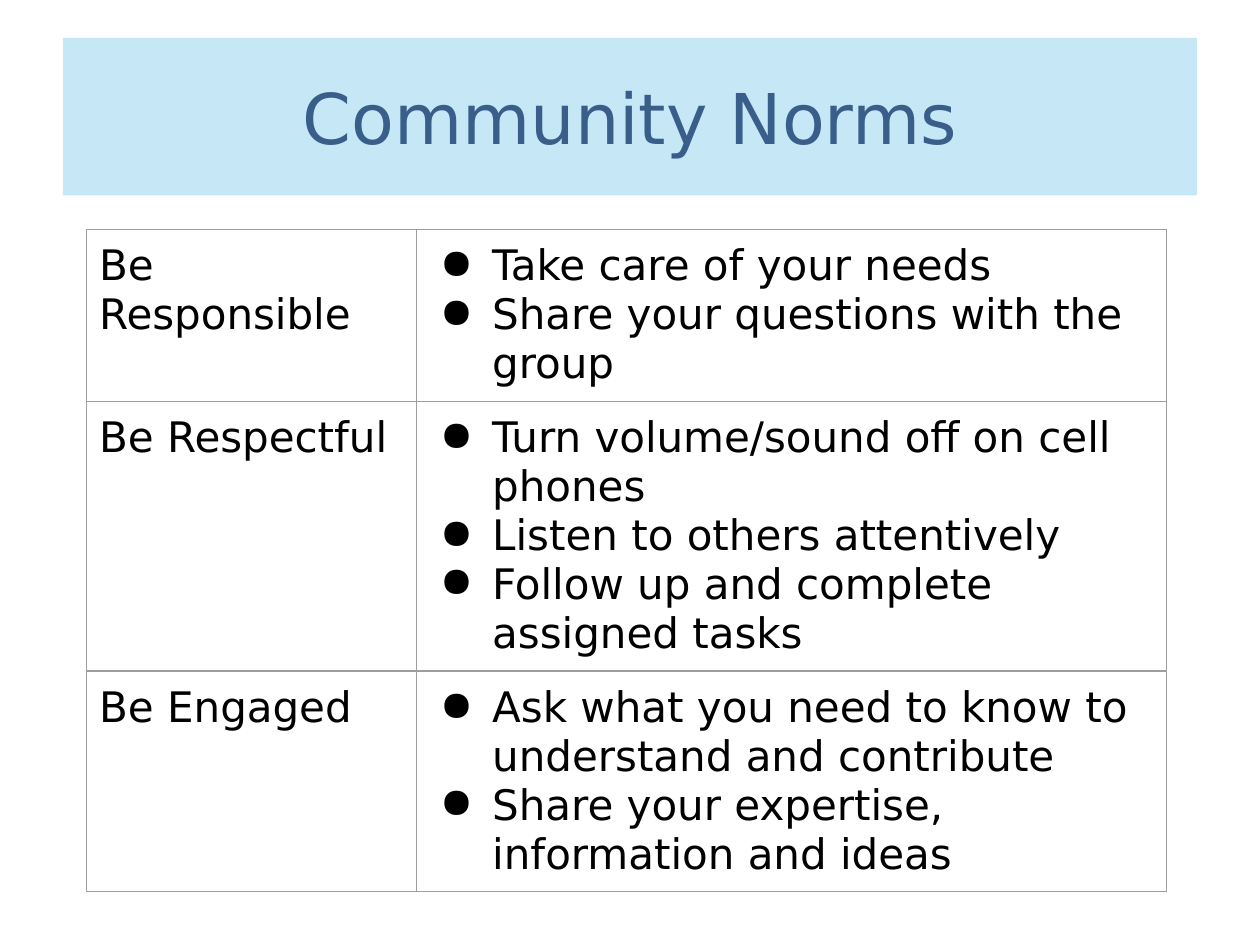
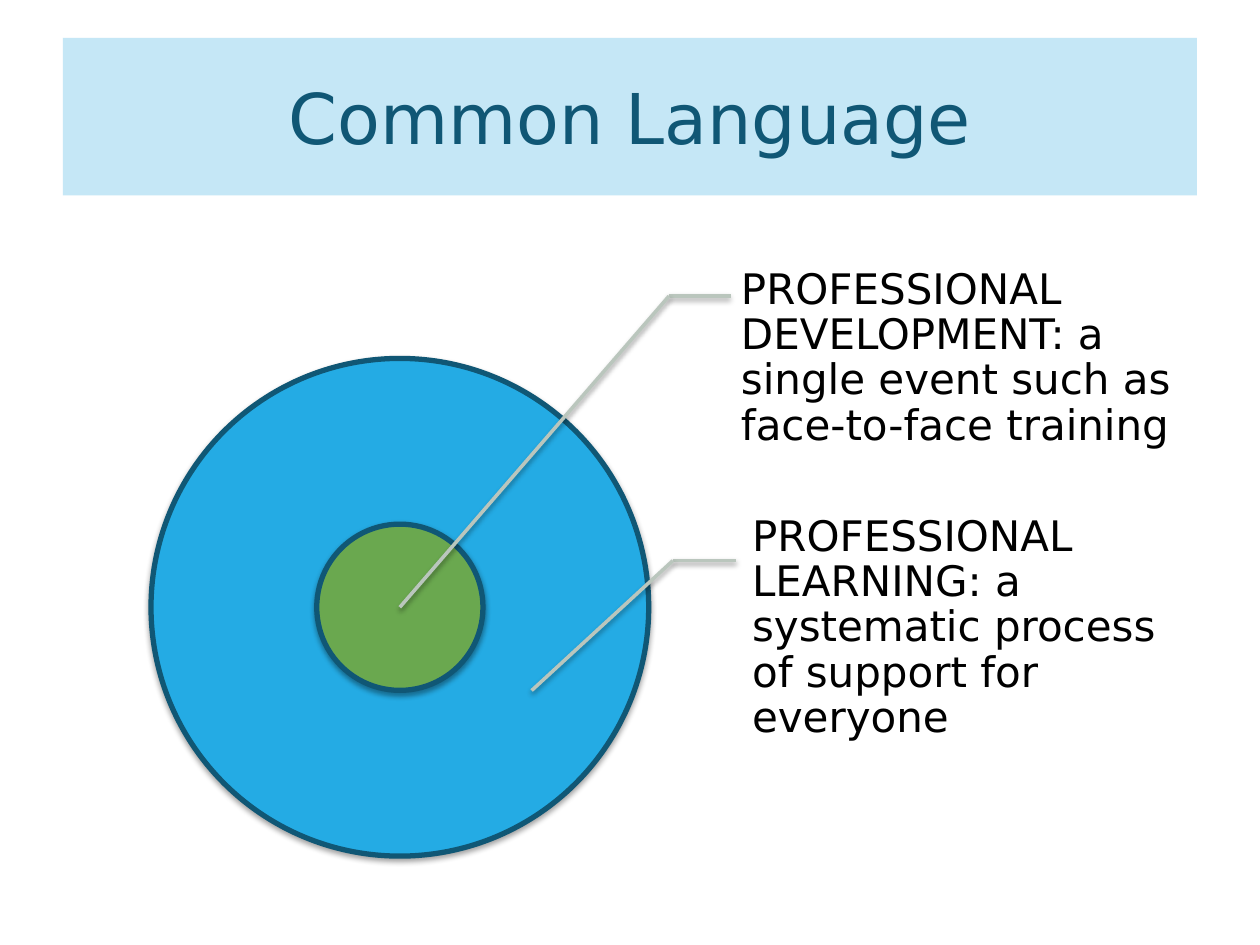
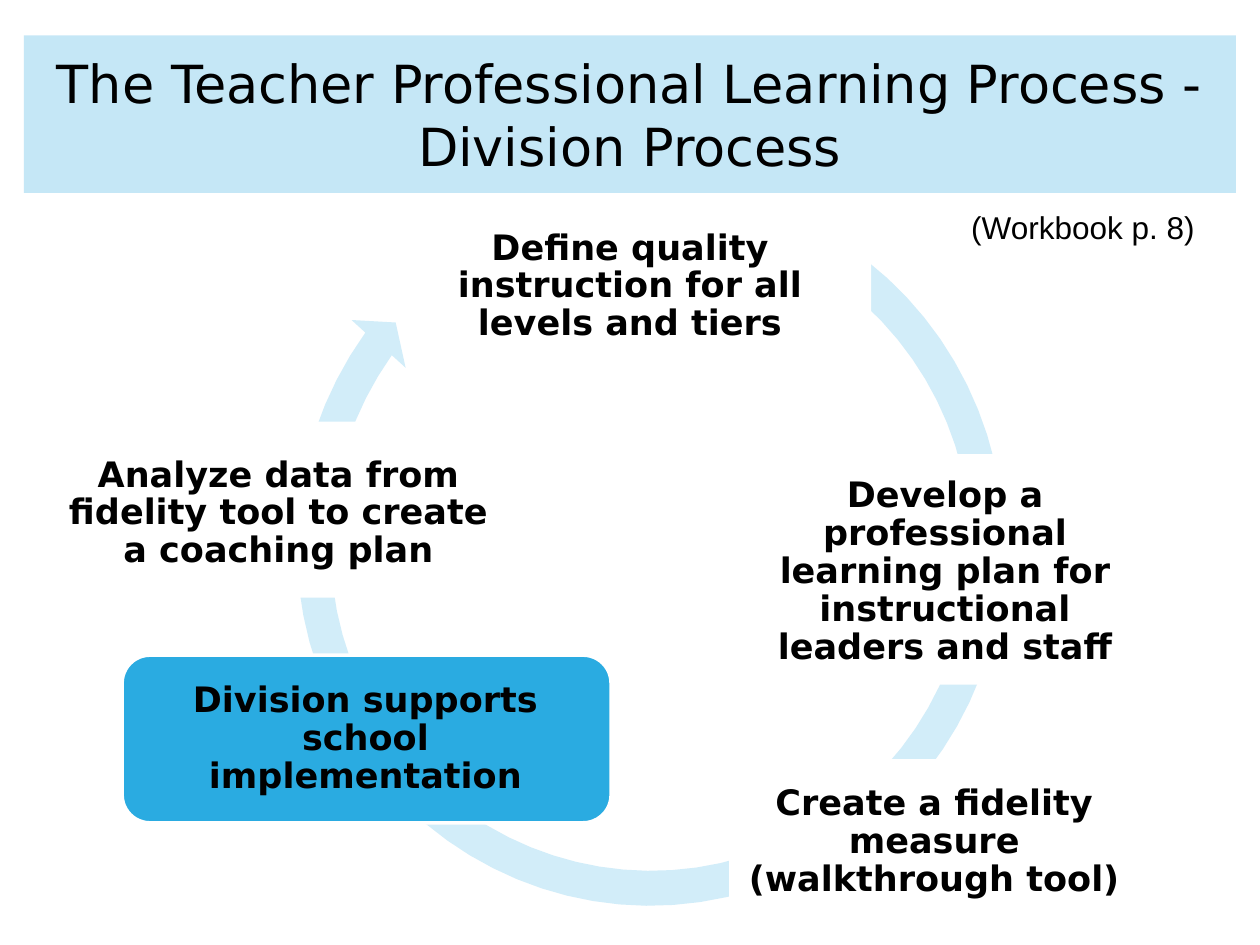
"""Build three slides on community norms, shared vocabulary and a learning cycle."""
from dataclasses import dataclass
from lxml.etree import SubElement
from pptx import Presentation
from pptx.dml.color import RGBColor
from pptx.enum.shapes import MSO_CONNECTOR, MSO_SHAPE
from pptx.enum.text import MSO_ANCHOR, PP_ALIGN
from pptx.oxml import parse_xml
from pptx.oxml.ns import nsdecls, qn
from pptx.util import Pt


@dataclass(frozen=True)
class Theme:
    font: str = "DejaVu Sans"
    note_font: str = "Arial"
    band: str = "A9DCF2"
    band_alpha: int = 67000
    norms: str = "395E89"
    navy: str = "105775"
    text: str = "000000"
    white: str = "FFFFFF"
    grid: str = "9E9E9E"
    outer: str = "24ABE4"
    inner: str = "6AA84F"
    leader: str = "BAC6BD"
    cycle: str = "D2EDF9"
    current: str = "2AABE1"
    title: int = 40
    long_title: int = 30
    body: int = 24
    step: int = 20
    note: int = 18


T = Theme()


def write(tf, texts, size, color=T.text, name=T.font, bold=False, frame={}, para={}):
    for key, value in {"word_wrap": True, **frame}.items():
        setattr(tf, key, value)
    for i, text in enumerate(texts):
        p = tf.paragraphs[0] if i == 0 else tf.add_paragraph()
        for key, value in para.items():
            setattr(p, key, value)
        r = p.add_run()
        r.text = text
        for key, value in {"size": Pt(size), "name": name, "bold": bold}.items():
            setattr(r.font, key, value)
        r.font.color.rgb = RGBColor.from_string(color)


def paint(sp, fill, line=None, width=0):
    sp.shadow.inherit = False
    sp.fill.solid()
    sp.fill.fore_color.rgb = RGBColor.from_string(fill)
    if line:
        sp.line.color.rgb = RGBColor.from_string(line)
        sp.line.width = Pt(width)
    else:
        sp.line.fill.background()


prs = Presentation()
prs.slide_width, prs.slide_height = Pt(720), Pt(540)

titles = [
    ("Community Norms", (36, 21.6, 648, 90), T.title, T.norms),
    ("Common Language", (36, 21.6, 648, 90), T.title, T.navy),
    ("The Teacher Professional Learning Process - Division Process",
     (13.7, 20.2, 692.6, 90), T.long_title, T.text),
]
slides = []
for text, box, size, color in titles:
    s = prs.slides.add_slide(prs.slide_layouts[6])
    sp = s.shapes.add_shape(MSO_SHAPE.RECTANGLE, *map(Pt, box))
    paint(sp, T.band)
    rgb = sp._element.spPr.find(qn("a:solidFill")).find(qn("a:srgbClr"))
    SubElement(rgb, qn("a:alpha"), val=str(T.band_alpha))
    write(sp.text_frame, [text], size, color,
          frame={"vertical_anchor": MSO_ANCHOR.MIDDLE}, para={"alignment": PP_ALIGN.CENTER})
    slides.append(s)
norms_slide, language_slide, process_slide = slides

norms = [
    ("Be Responsible", 98, ["Take care of your needs", "Share your questions with the group"]),
    ("Be Respectful", 154, ["Turn volume/sound off on cell phones", "Listen to others attentively",
                            "Follow up and complete assigned tasks"]),
    ("Be Engaged", 126, ["Ask what you need to know to understand and contribute",
                         "Share your expertise, information and ideas"]),
]
tbl = norms_slide.shapes.add_table(len(norms), 2, Pt(49.5), Pt(131), Pt(617), Pt(378)).table
tbl.first_row = tbl.horz_banding = False
for col, width in zip(tbl.columns, (188.6, 428.4)):
    col.width = Pt(width)
for row, (norm, height, actions) in zip(tbl.rows, norms):
    row.height = Pt(height)
    for cell, texts in zip(row.cells, ([norm], actions)):
        for side in ("left", "right", "top", "bottom"):
            setattr(cell, f"margin_{side}", Pt(7.2))
        cell.fill.background()
        tcPr = cell._tc.get_or_add_tcPr()
        for i, edge in enumerate("LRTB"):
            tcPr.insert(i, parse_xml(
                f'<a:ln{edge} {nsdecls("a")} w="{Pt(0.75)}"><a:solidFill>'
                f'<a:srgbClr val="{T.grid}"/></a:solidFill></a:ln{edge}>'))
        write(cell.text_frame, texts, T.body)
    for p in row.cells[1].text_frame.paragraphs:
        pPr = p._p.get_or_add_pPr()
        pPr.set("marL", str(Pt(36)))
        pPr.set("indent", str(-Pt(30)))
        SubElement(SubElement(pPr, qn("a:buClr")), qn("a:srgbClr"), val=T.text)
        SubElement(pPr, qn("a:buChar"), char="●")

shaded = []
cx, cy = 228.5, 347
for diameter, fill in ((284.4, T.outer), (95, T.inner)):
    sp = language_slide.shapes.add_shape(
        MSO_SHAPE.OVAL, Pt(cx - diameter / 2), Pt(cy - diameter / 2), Pt(diameter), Pt(diameter))
    paint(sp, fill, T.navy, 3)
    shaded.append(sp)

terms = [
    ("PROFESSIONAL DEVELOPMENT: a single event such as face-to-face training",
     (410.4, 145.4, 289.4, 118.8), 13, (382.3, 169.2), [(417.6, 169.2), (cx, cy)]),
    ("PROFESSIONAL LEARNING: a systematic process of support for everyone",
     (417.6, 299.5, 249.1, 118.8), 12.2, (384.5, 320.4), [(420.5, 320.4), (303.8, 394.6)]),
]
for text, box, left, knee, ends in terms:
    sp = language_slide.shapes.add_textbox(*map(Pt, box))
    write(sp.text_frame, [text], T.body, para={"line_spacing": 0.9},
          frame={"vertical_anchor": MSO_ANCHOR.MIDDLE, "margin_left": Pt(left),
                 "margin_right": Pt(2.2), "margin_top": Pt(2.2), "margin_bottom": Pt(2.2)})
    for end in ends:
        ln = language_slide.shapes.add_connector(MSO_CONNECTOR.STRAIGHT, *map(Pt, knee + end))
        ln.line.color.rgb = RGBColor.from_string(T.leader)
        ln.line.width = Pt(2)
        SubElement(ln._element.spPr, qn("a:effectLst"))
        shaded.append(ln)

for sp in shaded:
    shadow = SubElement(sp._element.spPr.find(qn("a:effectLst")), qn("a:outerShdw"),
                        blurRad=str(Pt(3.1)), dist=str(Pt(1.6)), dir="5400000", rotWithShape="0")
    rgb = SubElement(shadow, qn("a:srgbClr"), val=T.text)
    SubElement(rgb, qn("a:alpha"), val="36000")

outer_arc = [
    ((542.9, 172.8), (583.9, 256.3), (571.7, 341.3)),
    ((560.2, 426.2), (497.5, 494.6), (415.4, 512.6)),
    ((333.4, 531.4), (248.4, 496.1), (202.3, 424.1)),
    ((156.2, 352.1), (159.1, 259.2), (208.8, 190.1)),
]
arrowhead = [(200.9, 182.9), (226.1, 184.3), (231.8, 210.2), (223.9, 203)]
inner_arc = [
    ((179.3, 265.7), (177.1, 349.9), (218.9, 414)),
    ((260.6, 478.8), (337.7, 509.8), (411.8, 493.2)),
    ((486, 475.9), (542.2, 414.7), (553, 337.7)),
    ((563.8, 261.4), (526.3, 186.5), (459.4, 149)),
]
outline = [(469.4, 131.8)]
steps = 16
for arc, tip in ((outer_arc, arrowhead), (inner_arc, [])):
    for b, c, d in arc:
        a = outline[-1]
        for t in (i / steps for i in range(1, steps + 1)):
            u = 1 - t
            outline.append(tuple(
                u**3 * a[k] + 3 * u * u * t * b[k] + 3 * u * t * t * c[k] + t**3 * d[k]
                for k in (0, 1)))
    outline += tip
points = [(Pt(x), Pt(y)) for x, y in outline]
fb = process_slide.shapes.build_freeform(*points[0])
fb.add_line_segments(points[1:], close=True)
paint(fb.convert_to_shape(), T.cycle)

stages = [
    ("Define quality instruction for all levels and tiers", T.white,
     (233.3, 115.2, 263.5, 105), (232.6, 118.1, 254.9, 91.4)),
    ("Develop a professional learning plan for instructional leaders and staff", T.white,
     (411.8, 260.6, 254.9, 129.6), (423.4, 262.8, 233.3, 128.2)),
    ("Create a fidelity measure (walkthrough tool)", T.white,
     (417.6, 434.9, 244.1, 105), (411.8, 432, 244.1, 98.6)),
    ("Analyze data from fidelity tool to create a coaching plan", T.white,
     (20.2, 241.9, 277.2, 98.6), (27.4, 243.4, 263.5, 100.1)),
    ("Division supports school implementation", T.current,
     (69.8, 374.4, 279.4, 95.8), (77.8, 374.4, 262.1, 95.8)),
]
inset = {f"margin_{side}": Pt(5.8) for side in ("left", "right", "top", "bottom")}
for text, fill, card, box in stages:
    sp = process_slide.shapes.add_shape(MSO_SHAPE.ROUNDED_RECTANGLE, *map(Pt, card))
    paint(sp, fill, T.white, 2)
    sp = process_slide.shapes.add_textbox(*map(Pt, box))
    write(sp.text_frame, [text], T.step, bold=True,
          frame={"vertical_anchor": MSO_ANCHOR.MIDDLE, **inset},
          para={"alignment": PP_ALIGN.CENTER, "line_spacing": 0.9})

sp = process_slide.shapes.add_textbox(Pt(547.9), Pt(111.6), Pt(160.6), Pt(30.2))
write(sp.text_frame, ["(Workbook p. 8)"], T.note, name=T.note_font, frame={"margin_top": Pt(7.2)})

prs.save("out.pptx")
